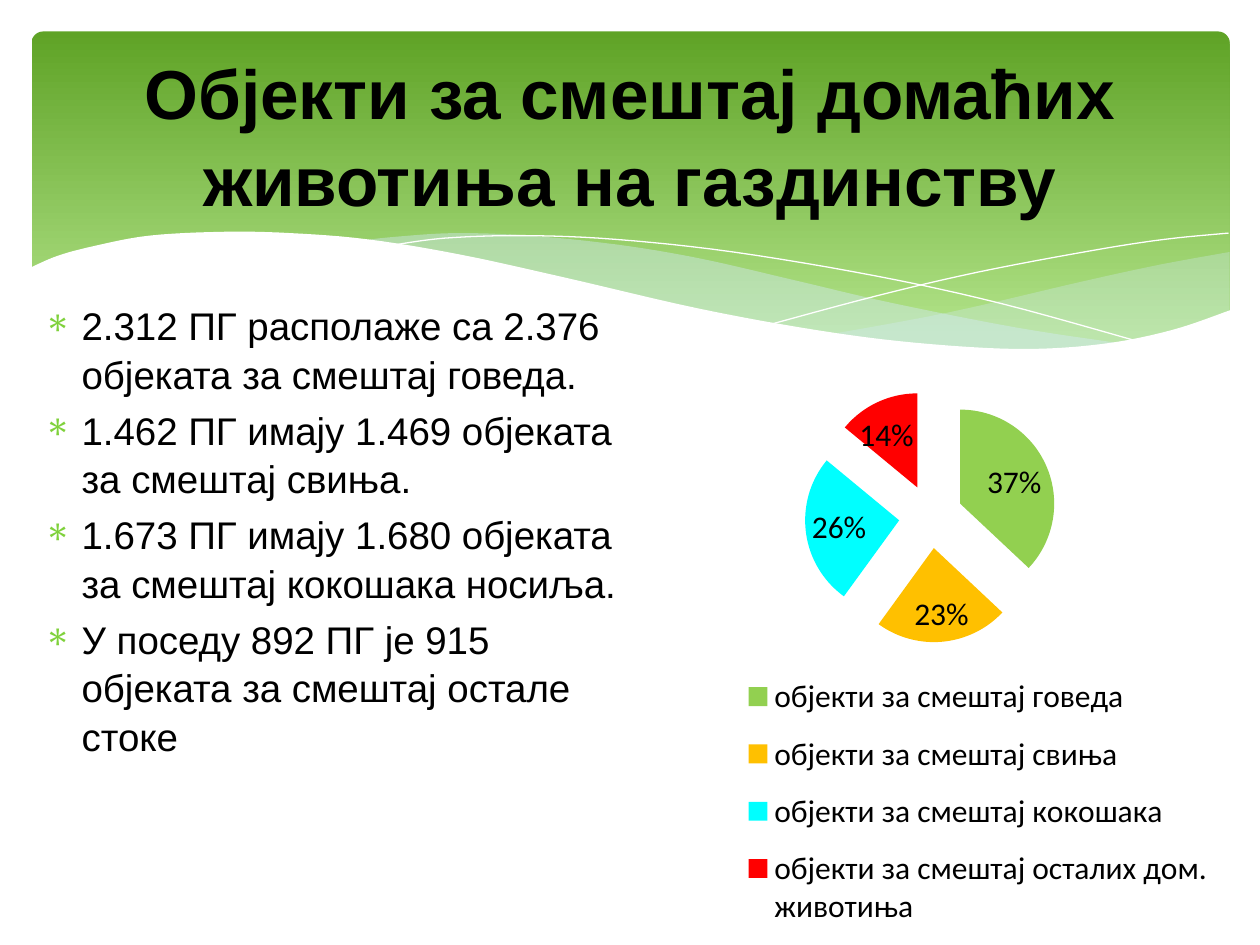
from dataclasses import dataclass
from typing import Optional

from lxml import etree
from pptx import Presentation
from pptx import util as u
from pptx.chart.data import CategoryChartData
from pptx.dml.color import RGBColor
from pptx.enum import chart as ch, shapes, text
from pptx.oxml import parse_xml
from pptx.oxml.ns import qn

# The slide is a grid of 100 columns by 75 rows with square cells
COLUMNS, ROWS = 100, 75
CELL = u.Inches(0.1)
Points = list[tuple[float, float]]


@dataclass
class Wave:
    """Curves of grid points, joined in order; corners only between curves."""
    curves: list[Points]
    fill: Optional[str] = None
    opacity: int = 100


def cells(*counts: float) -> list[int]:
    return [round(n * CELL) for n in counts]


def colour(value: str) -> RGBColor:
    return RGBColor.from_string(value)


def apply(target, formats: dict) -> None:
    for name, value in formats.items():
        setattr(target, name, value)


def smooth(knots: Points, steps: int = 6) -> Points:
    """Catmull-Rom curve through the knots."""
    padded = [knots[0], *knots, knots[-1]]
    curve = [knots[0]]
    for a, b, c, d in zip(padded, padded[1:], padded[2:], padded[3:]):
        for step in range(1, steps + 1):
            t = step / steps
            curve.append(tuple(
                (2 * q + (r - p) * t + (2 * p - 5 * q + 4 * r - s) * t ** 2
                 + (3 * q - p - 3 * r + s) * t ** 3) / 2
                for p, q, r, s in zip(a, b, c, d)))
    return curve


def draw_wave(slide, wave: Wave) -> None:
    outline = [tuple(cells(*point)) for curve in wave.curves for point in smooth(curve)]
    builder = slide.shapes.build_freeform(*outline[0])
    builder.add_line_segments(outline[1:], close=wave.fill is not None)
    shape = builder.convert_to_shape()
    shape.shadow.inherit = False
    if wave.fill is None:
        shape.fill.background()
        shape.line.color.rgb = colour("FFFFFF")
        shape.line.width = u.Pt(0)
        return
    shape.line.fill.background()
    shape.fill.solid()
    shape.fill.fore_color.rgb = colour(wave.fill)
    if wave.opacity < 100:
        tint = shape._element.spPr.find(qn("a:solidFill"))[0]
        etree.SubElement(tint, qn("a:alpha"), val=str(wave.opacity * 1000))


def add_text(slide, box: tuple, lines: list[str], size: float, bold: bool,
             frame_formats: dict, paragraph_formats: dict) -> list:
    frame = slide.shapes.add_textbox(*cells(*box)).text_frame
    apply(frame, {"word_wrap": True, **frame_formats})
    frame.text = "\n".join(lines)
    for paragraph in frame.paragraphs:
        apply(paragraph, {"line_spacing": 1.05, **paragraph_formats})
        font = paragraph.runs[0].font
        apply(font, {"name": "Arial", "size": u.Pt(size), "bold": bold})
        font.color.rgb = colour("000000")
    return list(frame.paragraphs)


def add_bullet(paragraph, mark: str, tint: str) -> None:
    properties = paragraph._p.get_or_add_pPr()
    properties.set("marL", str(cells(3)[0]))
    properties.set("indent", str(cells(-3)[0]))
    bullet_colour = etree.SubElement(properties, qn("a:buClr"))
    etree.SubElement(bullet_colour, qn("a:srgbClr"), val=tint)
    etree.SubElement(properties, qn("a:buChar"), char=mark)


def set_layout(parent, tag: str, x: float, y: float, w: float, h: float, inner: bool) -> None:
    """Place a chart part by shares of the chart's size."""
    ns = "http://schemas.openxmlformats.org/drawingml/2006/chart"
    target = '<c:layoutTarget val="inner"/>' if inner else ""
    layout = parse_xml(
        f'<c:layout xmlns:c="{ns}"><c:manualLayout>{target}'
        '<c:xMode val="edge"/><c:yMode val="edge"/>'
        f'<c:x val="{x}"/><c:y val="{y}"/><c:w val="{w}"/><c:h val="{h}"/>'
        '</c:manualLayout></c:layout>')
    for old in parent.findall(qn("c:layout")):
        parent.remove(old)
    before = parent.find(qn(tag))
    if before is None:
        parent.insert(0, layout)
    else:
        before.addnext(layout)


def add_pie(slide, box: tuple, slices: list[tuple[str, int, str]]) -> None:
    data = CategoryChartData()
    data.categories = [name for name, _, _ in slices]
    data.add_series("Series 1", [value for _, value, _ in slices])
    pie = slide.shapes.add_chart(ch.XL_CHART_TYPE.PIE, *cells(*box), data).chart
    apply(pie, {"has_title": False, "has_legend": True})
    apply(pie.font, {"name": "Calibri", "size": u.Pt(18)})
    pie.font.color.rgb = colour("000000")
    apply(pie.legend, {"position": ch.XL_LEGEND_POSITION.TOP, "include_in_layout": False})

    plot = pie.plots[0]
    apply(plot, {"vary_by_categories": True, "has_data_labels": True})
    apply(plot.data_labels, {
        "show_percentage": True, "show_value": False,
        "number_format": "0%", "number_format_is_linked": False,
        "position": ch.XL_LABEL_POSITION.BEST_FIT})

    series = plot.series[0]
    for index, (_, _, tint) in enumerate(slices):
        wedge = series.points[index].format.fill
        wedge.solid()
        wedge.fore_color.rgb = colour(tint)
    explosion = etree.Element(qn("c:explosion"), val="34")
    series._element.find(qn("c:dPt")).addprevious(explosion)

    plot_area = pie._chartSpace.chart.plotArea
    set_layout(plot_area, "c:none", 0.19, 0.245, 0.64, 0.343, True)
    set_layout(pie.legend._element, "c:legendPos", 0.2, 0.61, 0.76, 0.39, False)


TINT = "D6ECFF"
WAVES = [
    # right-hand veil
    Wave([[(97.6, 20), (92.1, 21), (86.1, 22.3), (75.3, 24.8), (66.1, 26.5)],
          [(66.1, 26.5), (71.9, 27.2), (78.1, 27.7), (84.4, 27.7),
           (90.5, 26.9), (94.9, 25.7), (97.6, 24.7)]], TINT, 29),
    # wide veil
    Wave([[(89.3, 27.3), (80.7, 26), (70.6, 24), (62.9, 22.2), (55.5, 20.5), (48.9, 19.4),
           (42, 18.7), (36.1, 18.5), (31.3, 18.8), (28.6, 19.1)],
          [(28.6, 19.1), (36.2, 20.3), (44.9, 22.2), (56.6, 24.8), (65, 26.4),
           (72.2, 27.4), (79.6, 27.8), (84.8, 27.7), (89.3, 27.3)]], TINT, 40),
    # hairlines
    Wave([[(30.9, 19.5), (35.3, 18.9), (41.6, 18.7), (48.9, 19), (58.2, 20),
           (69.5, 21.9), (79.5, 24.1), (90.7, 27.2)]]),
    Wave([[(61.3, 25.7), (69.5, 23.5), (77.6, 21.6), (86.6, 19.9), (92.4, 19), (97.5, 18.5)]]),
    # white lower edge of the header
    Wave([[(97.7, 24.6), (93, 26.2), (87.5, 27.3), (80.9, 27.7), (72.6, 27.2), (64.8, 26.2),
           (55.5, 24.5), (44.7, 22), (36.5, 20.2), (29.2, 19), (23, 18.5), (17.7, 18.4),
           (11.9, 18.7), (7.6, 19.5), (4.6, 20.3), (2.3, 21.3)],
          [(2.3, 32.9), (97.7, 32.9)]], "FFFFFF"),
]

FACTS = [
    "2.312 ПГ располаже са 2.376 објеката за смештај говеда.",
    "1.462 ПГ имају 1.469 објеката за смештај свиња.",
    "1.673 ПГ имају 1.680 објеката за смештај кокошака носиља.",
    "У поседу 892 ПГ је 915 објеката за смештај остале стоке",
]

HOUSING = [
    ("oбјекти за смештај говеда", 37, "92D050"),
    ("објекти за смештај свиња", 23, "FFC000"),
    ("објекти за смештај кокошака", 26, "00FFFF"),
    ("објекти за смештај осталих дом. животиња", 14, "FF0000"),
]


def main() -> None:
    deck = Presentation()
    deck.slide_width, deck.slide_height = cells(COLUMNS, ROWS)
    slide = deck.slides.add_slide(deck.slide_layouts[6])

    # Green header
    header = slide.shapes.add_shape(
        shapes.MSO_SHAPE.ROUNDED_RECTANGLE, *cells(2.5, 2.5, 95.1, 27))
    header.adjustments[0] = 0.034
    header.shadow.inherit = False
    header.line.fill.background()
    header.fill.gradient()
    header.fill.gradient_angle = 270
    for stop, (position, tint) in zip(header.fill.gradient_stops,
                                      [(0, "5FA326"), (0.9, "B2E389")]):
        stop.position = position
        stop.color.rgb = colour(tint)
    for wave in WAVES:
        draw_wave(slide, wave)

    # Facts, title and chart
    for fact in add_text(slide, (2.5, 23.3, 50, 47.5), FACTS, 22, False, {},
                         {"space_before": u.Pt(4.4)}):
        add_bullet(fact, "∗", "7FD13B")
    add_text(slide, (5, 3.7, 90, 13.7), ["Објекти за смештај домаћих животиња на газдинству"],
             39.6, True, {"vertical_anchor": text.MSO_ANCHOR.MIDDLE},
             {"alignment": text.PP_ALIGN.CENTER})
    add_pie(slide, (46.7, 16.7, 53.3, 58.3), HOUSING)
    deck.save("out.pptx")


if __name__ == "__main__":
    main()
